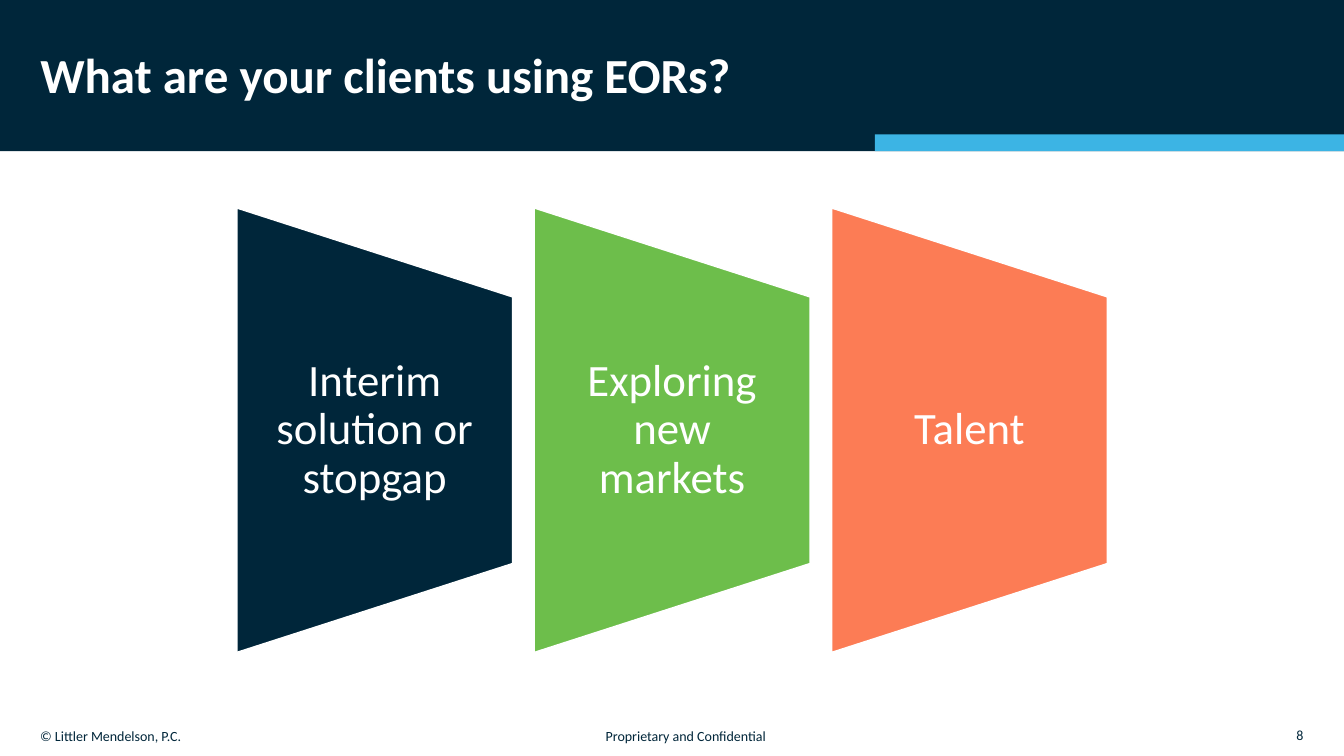
from pptx import Presentation
from pptx.dml.color import RGBColor
from pptx.enum.shapes import MSO_SHAPE
from pptx.enum.text import MSO_ANCHOR, PP_ALIGN
from pptx.util import Pt

NAVY = RGBColor(0x00, 0x26, 0x3A)
SKY = RGBColor(0x3C, 0xB4, 0xE4)
GREEN = RGBColor(0x6D, 0xBE, 0x4B)
CORAL = RGBColor(0xFC, 0x7C, 0x55)
WHITE = RGBColor(0xFF, 0xFF, 0xFF)
FONT = "Calibri"
WIDE, HIGH = 960, 540


def write(frame, text, size=10, color=NAVY, bold=False, align=PP_ALIGN.LEFT,
          anchor=MSO_ANCHOR.TOP, lines=1.0, wrap=True):
    frame.word_wrap = wrap
    frame.vertical_anchor = anchor
    para = frame.paragraphs[0]
    para.text = text
    para.alignment = align
    para.line_spacing = lines
    font = para.font
    font.name, font.size, font.bold = FONT, Pt(size), bold
    font.color.rgb = color


def add_text(slide, box, text, inset=None, **style):
    frame = slide.shapes.add_textbox(*map(Pt, box)).text_frame
    if inset is not None:
        frame.margin_left = frame.margin_right = Pt(inset)
        frame.margin_top = frame.margin_bottom = 0
    write(frame, text, **style)


def add_block(slide, kind, box, fill, line=None):
    shape = slide.shapes.add_shape(kind, *map(Pt, box))
    shape.shadow.inherit = False
    shape.fill.solid()
    shape.fill.fore_color.rgb = fill
    if line is None:
        shape.line.fill.background()
    else:
        shape.line.color.rgb = line
        shape.line.width = Pt(1)
    return shape


def add_header(slide, box, text):
    left, top, width, height = box
    # Dark band with a light strip at its lower right
    add_block(slide, MSO_SHAPE.RECTANGLE, box, NAVY)
    strip, thick = 335, 12
    add_block(slide, MSO_SHAPE.RECTANGLE,
              (left + width - strip, top + height - thick, strip, thick), SKY)
    # Title, brought in front of the band
    title = slide.shapes.title
    title.left, title.top = Pt(left + 21.6), Pt(top + 10)
    title.width, title.height = Pt(width - 44), Pt(91.5)
    write(title.text_frame, text, size=35, color=WHITE, bold=True,
          anchor=MSO_ANCHOR.MIDDLE, lines=0.9)
    slide.shapes._spTree.append(title._element)


def add_panels(slide, box, items, gap=15.5):
    left, top, width, height = box
    wide = (width - gap * (len(items) - 1)) / len(items)
    for i, (text, fill) in enumerate(items):
        x = left + i * (wide + gap)
        # Quarter turn about the panel's centre, so its sides swap
        turned = (x + (wide - height) / 2, top + (height - wide) / 2,
                  height, wide)
        panel = add_block(slide, MSO_SHAPE.FLOWCHART_MANUAL_OPERATION,
                          turned, fill, line=WHITE)
        panel.rotation = 270
        # Upright label over the panel's middle
        add_text(slide, (x, top + height * 0.2, wide, height * 0.6), text,
                 inset=16, size=32, color=WHITE, align=PP_ALIGN.CENTER,
                 anchor=MSO_ANCHOR.MIDDLE, lines=0.9)


def add_footer(slide, box, owner, notice, page):
    left, top, width, height = box
    add_text(slide, (left, top, 243, height), owner)
    add_text(slide, (left + 404, top, 130, height), notice, wrap=False)
    add_text(slide, (left + width - 224, top, 224, 18), page,
             align=PP_ALIGN.RIGHT, anchor=MSO_ANCHOR.MIDDLE)


def main():
    deck = Presentation()
    deck.slide_width, deck.slide_height = Pt(WIDE), Pt(HIGH)
    slide = deck.slides.add_slide(deck.slide_layouts[5])
    add_header(slide, (0, 0, WIDE, 108), "What are your clients using EORs?")
    add_panels(slide, (169.2, 148.6, 621.8, 317.4), [
        ("Interim solution or stopgap", NAVY),
        ("Exploring new markets", GREEN),
        ("Talent", CORAL),
    ])
    add_footer(slide, (21.6, 516, 916.6, 19.4), "© Littler Mendelson, P.C.",
               "Proprietary and Confidential", "8")
    deck.save("out.pptx")


if __name__ == "__main__":
    main()
